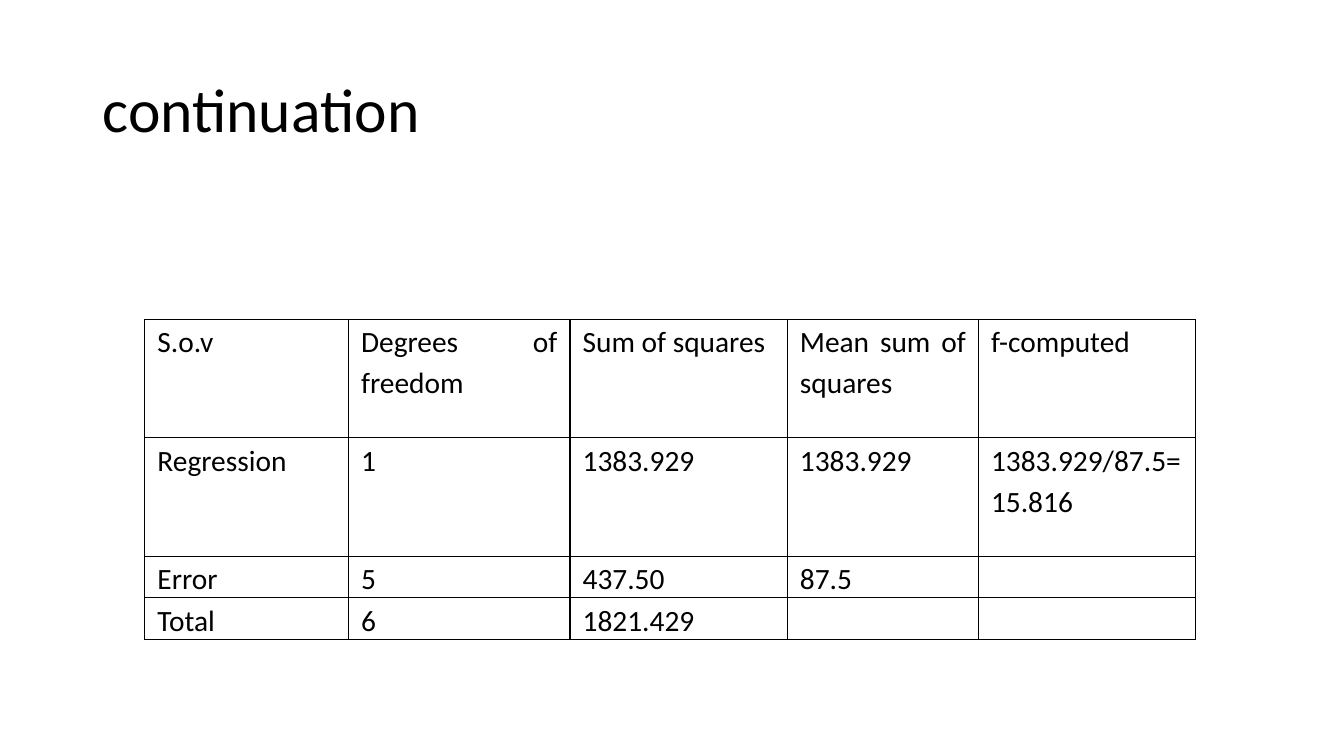
from lxml.etree import SubElement
from pptx import Presentation
from pptx.dml.color import RGBColor
from pptx.enum.text import MSO_ANCHOR, PP_ALIGN
from pptx.oxml.ns import qn
from pptx.util import Pt

PX = 9525  # EMU, 96 px to the inch
FONT = "Calibri"
BLACK = "000000"
COLUMN_WIDTHS = [194, 211, 207, 182, 207]
ROW_HEIGHTS = [113, 113, 39, 39]
ANOVA_ROWS = [
    ["S.o.v", "Degrees of freedom", "Sum of squares", "Mean sum of squares", "f-computed"],
    ["Regression", "1", "1383.929", "1383.929", "1383.929/87.5=15.816"],
    ["Error", "5", "437.50", "87.5", ""],
    ["Total", "6", "1821.429", "", ""],
]


def px(length):
    return length * PX


def color(hex_string):
    return RGBColor.from_string(hex_string)


def format_paragraph(para, size, alignment, line_spacing):
    para.alignment = alignment
    para.line_spacing = line_spacing
    for span in para.runs:
        span.font.name = FONT
        span.font.size = Pt(size)
        span.font.color.rgb = color(BLACK)


def add_title(page, text, left, top, width, height):
    title = page.shapes.title
    title.left, title.top, title.width, title.height = map(px, (left, top, width, height))
    title.text_frame.text = text
    title.text_frame.vertical_anchor = MSO_ANCHOR.MIDDLE
    format_paragraph(title.text_frame.paragraphs[0], 44, PP_ALIGN.LEFT, 0.9)


def add_borders(cell):
    properties = cell._tc.get_or_add_tcPr()
    for side in ("a:lnL", "a:lnR", "a:lnT", "a:lnB"):
        line = SubElement(properties, qn(side), w=str(Pt(1)))
        fill = SubElement(line, qn("a:solidFill"))
        SubElement(fill, qn("a:srgbClr"), val=BLACK)


def fill_cell(cell, text):
    add_borders(cell)
    cell.fill.background()
    cell.margin_left = cell.margin_right = px(12)
    cell.margin_top = cell.margin_bottom = 0
    cell.text_frame.text = text
    format_paragraph(cell.text_frame.paragraphs[0], 21, PP_ALIGN.JUSTIFY, 1.15)


def add_anova_table(page, left, top):
    frame = page.shapes.add_table(
        len(ROW_HEIGHTS), len(COLUMN_WIDTHS), px(left), px(top),
        px(sum(COLUMN_WIDTHS)), px(sum(ROW_HEIGHTS)))
    table = frame.table
    table.first_row = table.horz_banding = False
    for column, width in zip(table.columns, COLUMN_WIDTHS):
        column.width = px(width)
    for row, height, texts in zip(table.rows, ROW_HEIGHTS, ANOVA_ROWS):
        row.height = px(height)
        for cell, text in zip(row.cells, texts):
            fill_cell(cell, text)


def main():
    deck = Presentation()
    deck.slide_width, deck.slide_height = px(1280), px(720)
    page = deck.slides.add_slide(deck.slide_layouts.get_by_name("Title Only"))
    add_title(page, "continuation", 88, 38, 1104, 139)
    add_anova_table(page, 138, 304)
    deck.save("out.pptx")


if __name__ == "__main__":
    main()
